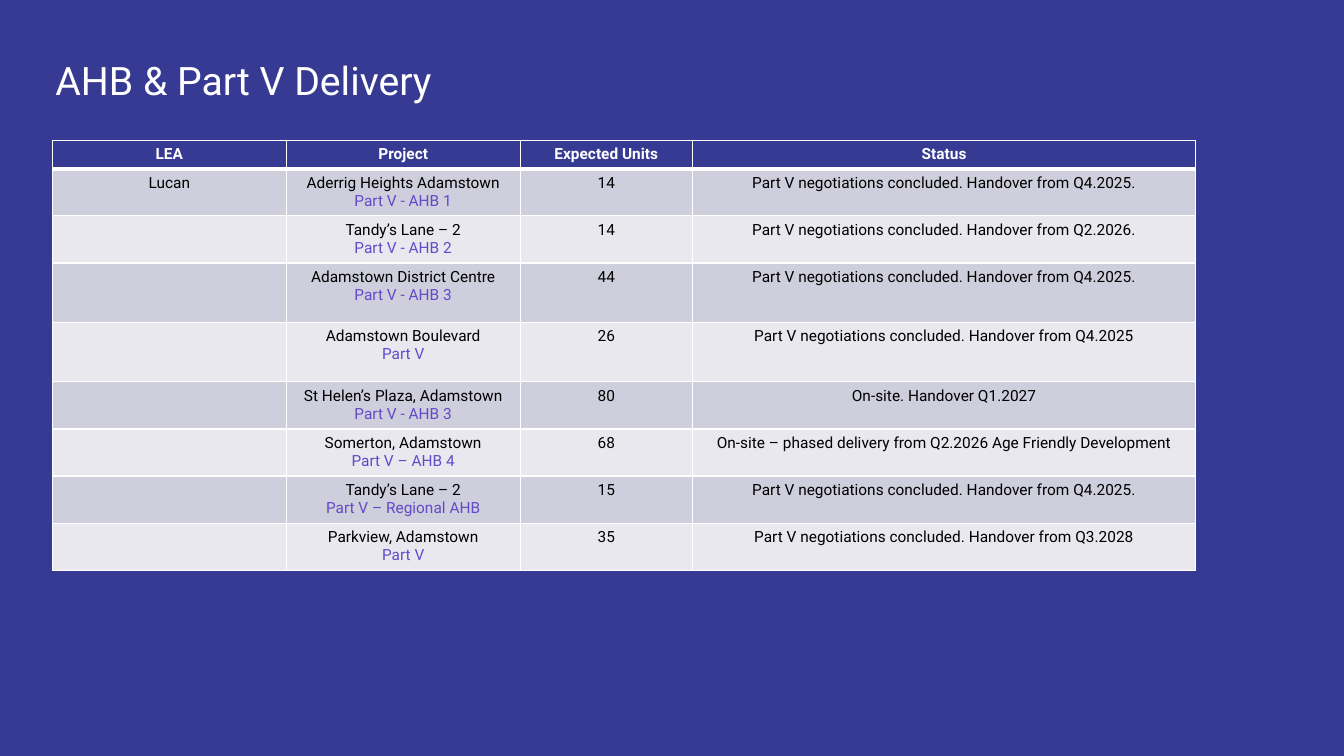
from lxml import etree
from pptx import Presentation
from pptx import util as u
from pptx.dml.color import RGBColor
from pptx.enum import text
from pptx.oxml import ns

TITLE = "AHB & Part V Delivery"
HEADINGS = ["LEA", "Project", "Expected Units", "Status"]
CONCLUDED = "Part V negotiations concluded. Handover from "
# area, project, provider, expected units, status
PROJECTS = [
    ("Lucan", "Aderrig Heights Adamstown", "Part V - AHB 1", 14, CONCLUDED + "Q4.2025."),
    ("", "Tandy’s Lane – 2", "Part V - AHB 2", 14, CONCLUDED + "Q2.2026."),
    ("", "Adamstown District Centre", "Part V - AHB 3", 44, CONCLUDED + "Q4.2025."),
    ("", "Adamstown Boulevard", "Part V", 26, CONCLUDED + "Q4.2025"),
    ("", "St Helen’s Plaza, Adamstown", "Part V - AHB 3", 80, "On-site. Handover Q1.2027"),
    ("", "Somerton, Adamstown", "Part V – AHB 4", 68,
     "On-site – phased delivery from Q2.2026 Age Friendly Development"),
    ("", "Tandy’s Lane – 2", "Part V – Regional AHB", 15, CONCLUDED + "Q4.2025."),
    ("", "Parkview, Adamstown", "Part V", 35, CONCLUDED + "Q3.2028"),
]
COLUMN_WIDTHS = [2.32, 2.32, 1.71, 4.99]
HEADER_HEIGHT, ROW_HEIGHT, TALL_HEIGHT = 0.27, 0.45, 0.59
TALL_ROWS = (3, 4)
COLORS = {"navy": "363A92", "white": "FFFFFF", "black": "000000",
          "violet": "624AC9", "dark band": "CECEDC", "light band": "E8E8EE"}
FONT = "Roboto"


def color(name):
    return RGBColor.from_string(COLORS[name])


def style(para, size, name, bold=False):
    para.font.name, para.font.size, para.font.bold = FONT, u.Pt(size), bold
    para.font.color.rgb = color(name)


def add_borders(cell, bottom_width):
    properties = cell._tc.get_or_add_tcPr()
    for side, width in zip("LRTB", (1, 1, 1, bottom_width)):
        line = etree.SubElement(properties, ns.qn(f"a:ln{side}"), w=str(u.Pt(width)))
        fill = etree.SubElement(line, ns.qn("a:solidFill"))
        etree.SubElement(fill, ns.qn("a:srgbClr"), val=COLORS["white"])


def fill_cell(cell, lines, band, bottom_width=1, bold=False):
    """Write (wording, colour) lines into a bordered, filled cell."""
    add_borders(cell, bottom_width)
    cell.fill.solid()
    cell.fill.fore_color.rgb = color(band)
    cell.text = "\n".join(wording for wording, _ in lines)
    for para, (_, name) in zip(cell.text_frame.paragraphs, lines):
        para.alignment = text.PP_ALIGN.CENTER
        style(para, 11, name, bold)


def add_title(page):
    box = page.shapes.add_textbox(u.Inches(0.55), u.Inches(0.51), u.Inches(5.41), u.Inches(0.56))
    frame = box.text_frame
    frame.word_wrap = True
    frame.vertical_anchor = text.MSO_ANCHOR.MIDDLE
    frame.margin_left = frame.margin_right = frame.margin_top = frame.margin_bottom = 0
    frame.text = TITLE
    style(frame.paragraphs[0], 28, "white")


def add_projects(page):
    heights = [HEADER_HEIGHT] + [TALL_HEIGHT if row in TALL_ROWS else ROW_HEIGHT
                                 for row in range(1, len(PROJECTS) + 1)]
    table = page.shapes.add_table(
        len(heights), len(HEADINGS), u.Inches(0.52), u.Inches(1.39),
        u.Inches(sum(COLUMN_WIDTHS)), u.Inches(sum(heights))).table
    for column, width in zip(table.columns, COLUMN_WIDTHS):
        column.width = u.Inches(width)
    for row, height in zip(table.rows, heights):
        row.height = u.Inches(height)
    for column, heading in enumerate(HEADINGS):
        fill_cell(table.cell(0, column), [(heading, "white")], "navy", 3, True)
    for row, (area, project, provider, units, status) in enumerate(PROJECTS, 1):
        band = "dark band" if row % 2 else "light band"
        contents = [[(area, "black")], [(project, "black"), (provider, "violet")],
                    [(str(units), "black")], [(status, "black")]]
        for column, lines in enumerate(contents):
            fill_cell(table.cell(row, column), lines, band)


def main():
    deck = Presentation()
    deck.slide_width, deck.slide_height = u.Inches(13.33), u.Inches(7.5)
    page = deck.slides.add_slide(deck.slide_layouts[6])
    page.background.fill.solid()
    page.background.fill.fore_color.rgb = color("navy")
    add_title(page)
    add_projects(page)
    deck.save("out.pptx")


if __name__ == "__main__":
    main()
